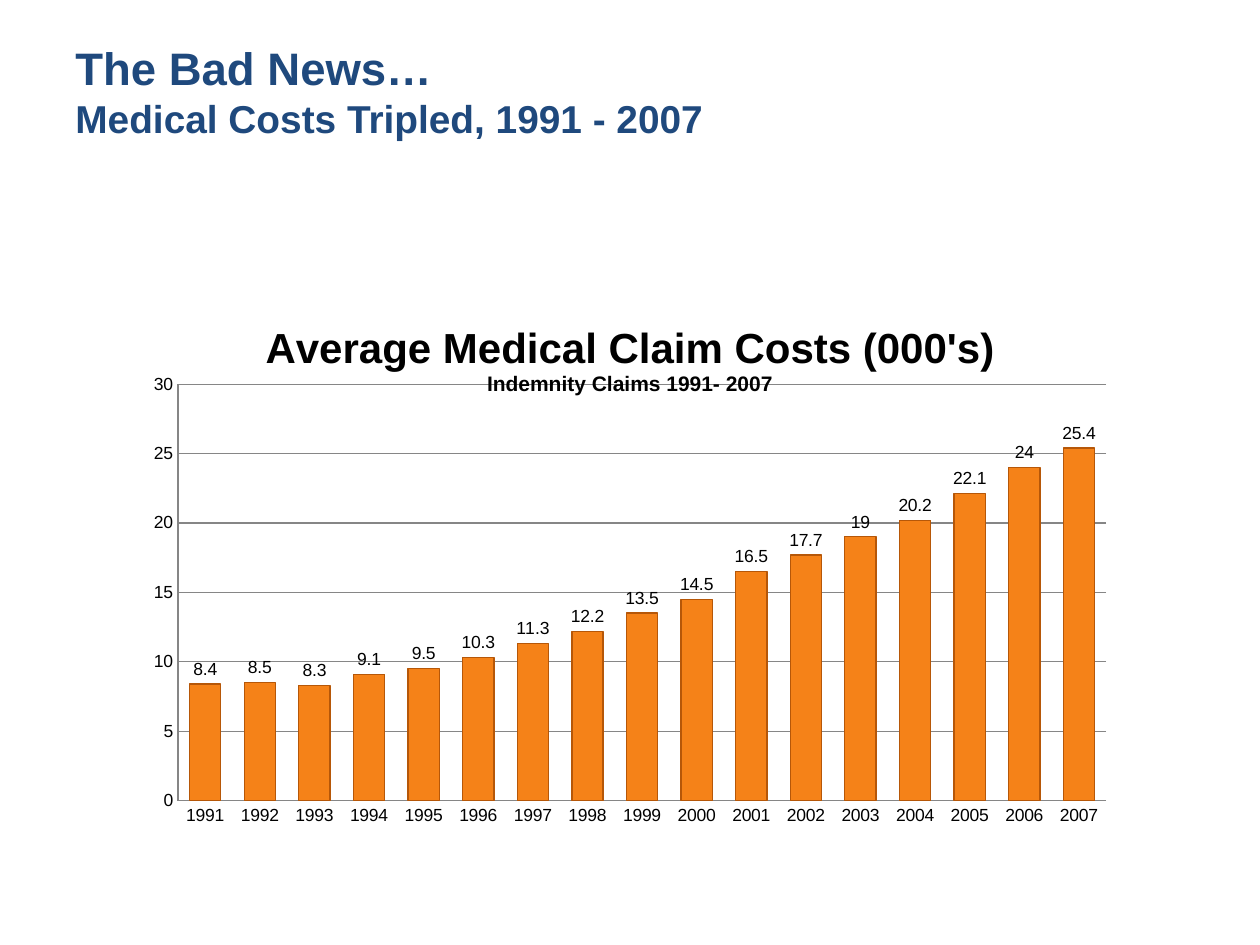
from lxml import etree
from pptx import Presentation
from pptx.chart.data import CategoryChartData
from pptx.dml.color import RGBColor
from pptx.enum.chart import XL_CHART_TYPE as ChartType, XL_LABEL_POSITION as LabelPos, XL_TICK_MARK as Tick
from pptx.enum.text import MSO_ANCHOR as Anchor
from pptx.oxml.ns import qn
from pptx.util import Inches, Pt

FONT = "Arial"
COLORS = {"heading": "1F497D", "text": "000000", "bar": "F58218", "edge": "B65708", "grid": "868686"}
HEADING = [("The Bad News…", 26), ("Medical Costs Tripled, 1991 - 2007", 22.2)]
CHART_TITLE = [("Average Medical Claim Costs (000's)", 24), ("Indemnity Claims 1991- 2007", 12)]
FIRST_YEAR = 1991
COSTS = [8.4, 8.5, 8.3, 9.1, 9.5, 10.3, 11.3, 12.2, 13.5, 14.5, 16.5, 17.7, 19, 20.2, 22.1, 24, 25.4]
TITLE_LAYOUT = {"xMode": "edge", "yMode": "edge", "x": 0.13, "y": 0.04}
PLOT_LAYOUT = {"layoutTarget": "inner", "xMode": "edge", "yMode": "edge",
               "x": 0.045, "y": 0.16, "w": 0.941, "h": 0.767}


def rgb(name):
    return RGBColor.from_string(COLORS[name])


def style(font, size, color, bold=False):
    font.name, font.size, font.bold = FONT, Pt(size), bold
    font.color.rgb = rgb(color)


def add_run(p, text, size, color):
    r = p.add_run()
    r.text = text
    style(r.font, size, color, True)


def set_line(line, color):
    line.color.rgb = rgb(color)
    line.width = Pt(0.75)


def set_layout(parent, index, values):
    for old in parent.findall(qn("c:layout")):
        parent.remove(old)
    layout = etree.Element(qn("c:layout"))
    manual = etree.SubElement(layout, qn("c:manualLayout"))
    for tag, value in values.items():
        etree.SubElement(manual, qn("c:" + tag)).set("val", str(value))
    parent.insert(index, layout)


def add_heading(slide):
    tf = slide.shapes.add_textbox(Inches(0.5), Inches(0.26), Inches(9), Inches(0.92)).text_frame
    tf.word_wrap = True
    tf.vertical_anchor = Anchor.MIDDLE
    p = tf.paragraphs[0]
    for i, (text, size) in enumerate(HEADING):
        if i:
            p.add_line_break()
        add_run(p, text, size, "heading")


def add_cost_chart(slide):
    data = CategoryChartData()
    data.categories = [str(FIRST_YEAR + i) for i in range(len(COSTS))]
    data.add_series("Average medical cost", COSTS)
    chart = slide.shapes.add_chart(ChartType.COLUMN_CLUSTERED, Inches(1.06), Inches(2.36),
                                   Inches(7.83), Inches(4.31), data).chart
    style(chart.font, 10, "text")
    chart.has_legend = False

    chart.has_title = True
    title = chart.chart_title
    tf = title.text_frame
    for i, (text, size) in enumerate(CHART_TITLE):
        add_run(tf.add_paragraph() if i else tf.paragraphs[0], text, size, "text")
    set_layout(title._element, 1, TITLE_LAYOUT)
    set_layout(chart._chartSpace.chart.plotArea, 0, PLOT_LAYOUT)

    for axis in (chart.category_axis, chart.value_axis):
        axis.major_tick_mark = axis.minor_tick_mark = Tick.NONE
        set_line(axis.format.line, "grid")
        style(axis.tick_labels.font, 10, "text")
    values = chart.value_axis
    values.minimum_scale, values.maximum_scale, values.major_unit = 0, 30, 5
    values.has_major_gridlines = True
    set_line(values.major_gridlines.format.line, "grid")

    plot = chart.plots[0]
    plot.gap_width = 75
    plot.vary_by_categories = False
    bars = plot.series[0]
    bars.format.fill.solid()
    bars.format.fill.fore_color.rgb = rgb("bar")
    set_line(bars.format.line, "edge")
    labels = bars.data_labels
    labels.show_value = True
    labels.position = LabelPos.OUTSIDE_END
    style(labels.font, 10, "text")


def main():
    prs = Presentation()
    prs.slide_width, prs.slide_height = Inches(10), Inches(7.5)
    slide = prs.slides.add_slide(prs.slide_layouts[6])
    add_heading(slide)
    add_cost_chart(slide)
    prs.save("out.pptx")


if __name__ == "__main__":
    main()
